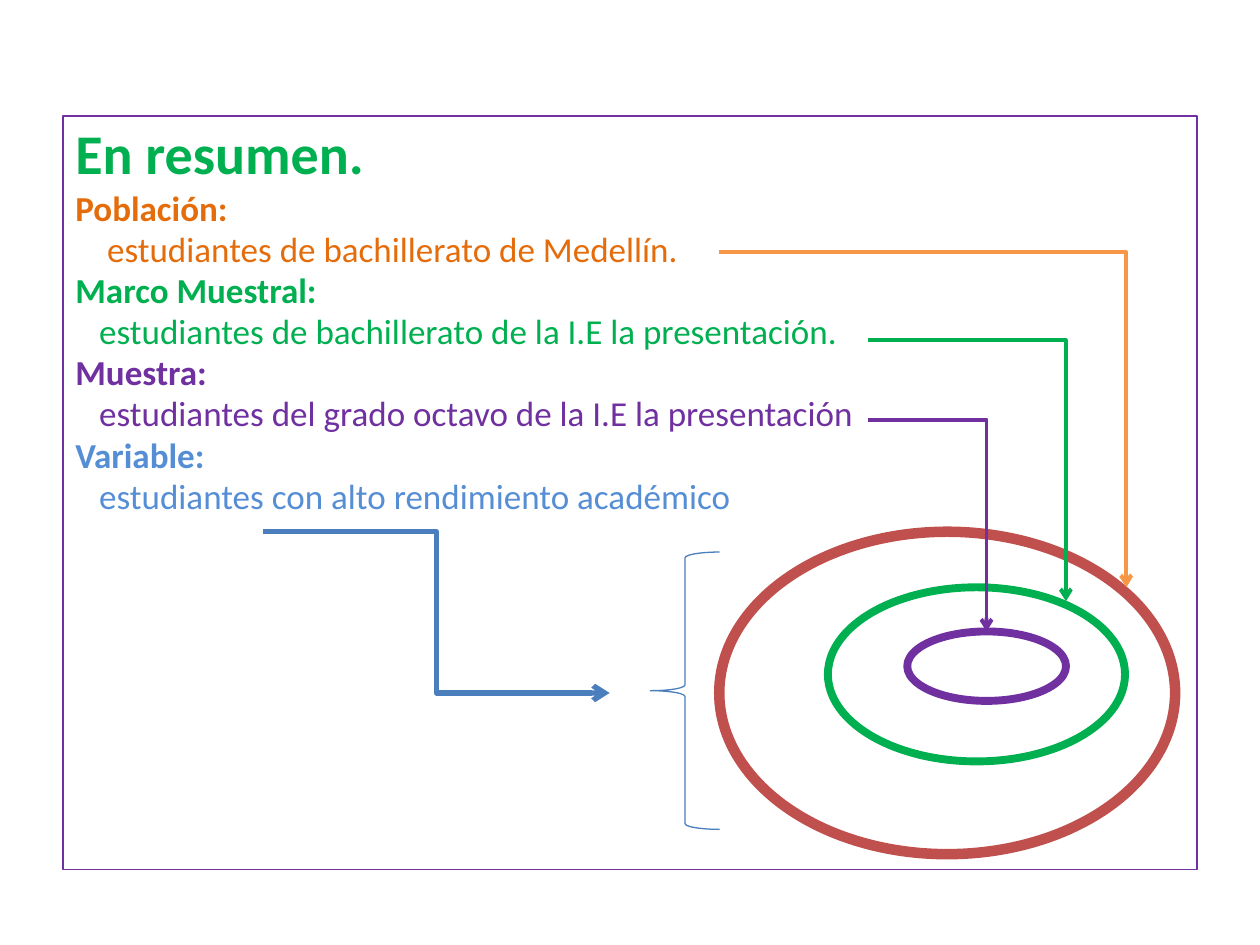
from lxml.etree import SubElement
from pptx import Presentation
from pptx.dml.color import RGBColor
from pptx.enum.shapes import MSO_CONNECTOR as CONN, MSO_SHAPE as SHAPE
from pptx.enum.text import MSO_ANCHOR as ANCHOR, PP_ALIGN as ALIGN
from pptx.oxml.ns import qn
from pptx.util import Cm, Pt

ORANGE, GREEN, PURPLE, BLUE = "E46C0A", "00B050", "7030A0", "558ED5"
RED, LIGHT_ORANGE, STEEL, WHITE = "C0504D", "F79646", "4B7EBC", "FFFFFF"

TITLE = "En resumen."
TERMS = [
    ("Población:", "estudiantes de bachillerato de Medellín.", ORANGE, 0.64),
    ("Marco Muestral:", "estudiantes de bachillerato de la I.E la presentación.", GREEN, 0.48),
    ("Muestra:", "estudiantes del grado octavo de la I.E la presentación", PURPLE, 0.48),
    ("Variable:", "estudiantes con alto rendimiento académico", BLUE, 0.48),
]
FRAME = (1.27, 2.34, 22.86, 15.19)
BRACE = (13.11, 11.13, 1.4, 5.59)
SETS = [
    ((14.5, 10.72, 9.19, 6.5), RED, 6),
    ((16.69, 11.84, 5.99, 3.51), GREEN, 4.5),
    ((18.29, 12.73, 3.2, 1.4), PURPLE, 4.5),
]
ARROWS = [
    ((14.5, 5.08, 22.71, 11.84), LIGHT_ORANGE, 2.25, 99900),
    ((17.5, 6.86, 21.49, 12.12), GREEN, 2.25, 99900),
    ((17.5, 8.46, 19.89, 12.73), PURPLE, 2.25, 99900),
    ((5.31, 10.72, 12.29, 13.97), STEEL, 3, 50000),
]


def color(value):
    return RGBColor.from_string(value)


def set_line(shape, value, width):
    shape.line.color.rgb = color(value)
    shape.line.width = Pt(width)


def add_shape(s, kind, box, line, width, fill=None):
    sp = s.shapes.add_shape(kind, *map(Cm, box))
    sp.shadow.inherit = False
    if fill:
        sp.fill.solid()
        sp.fill.fore_color.rgb = color(fill)
    else:
        sp.fill.background()
    set_line(sp, line, width)
    return sp


def add_arrow(s, ends, line, width, bend):
    c = s.shapes.add_connector(CONN.ELBOW, *map(Cm, ends))
    set_line(c, line, width)
    SubElement(c.line._get_or_add_ln(), qn("a:tailEnd"), type="arrow")
    props = c._element.spPr
    SubElement(props, qn("a:effectLst"))
    adjust = props.find(qn("a:prstGeom")).find(qn("a:avLst"))
    SubElement(adjust, qn("a:gd"), name="adj1", fmla=f"val {bend}")


def format_line(p, value, size, bold, indent=0):
    p.alignment = ALIGN.LEFT
    p.line_spacing = 0.98
    p._p.get_or_add_pPr().set("marL", str(Cm(indent)))
    font = p.runs[0].font
    font.name, font.size, font.bold = "Calibri", Pt(size), bold
    font.color.rgb = color(value)


def add_summary(s):
    tf = add_shape(s, SHAPE.RECTANGLE, FRAME, PURPLE, 0.75).text_frame
    tf.word_wrap = True
    tf.vertical_anchor = ANCHOR.TOP
    tf.text = TITLE
    tf.paragraphs[0].space_before = Pt(2)
    format_line(tf.paragraphs[0], GREEN, 32, True)
    for term, meaning, value, indent in TERMS:
        for text, bold, left in ((term, True, 0), (meaning, False, indent)):
            p = tf.add_paragraph()
            p.text = text
            format_line(p, value, 20, bold, left)


def main():
    prs = Presentation()
    prs.slide_width, prs.slide_height = Cm(25.4), Cm(19.05)
    s = prs.slides.add_slide(prs.slide_layouts[6])
    add_summary(s)
    for box, line, width in SETS:
        add_shape(s, SHAPE.OVAL, box, line, width, WHITE)
    add_shape(s, SHAPE.LEFT_BRACE, BRACE, STEEL, 0.75)
    for arrow in ARROWS:
        add_arrow(s, *arrow)
    prs.save("out.pptx")


if __name__ == "__main__":
    main()
